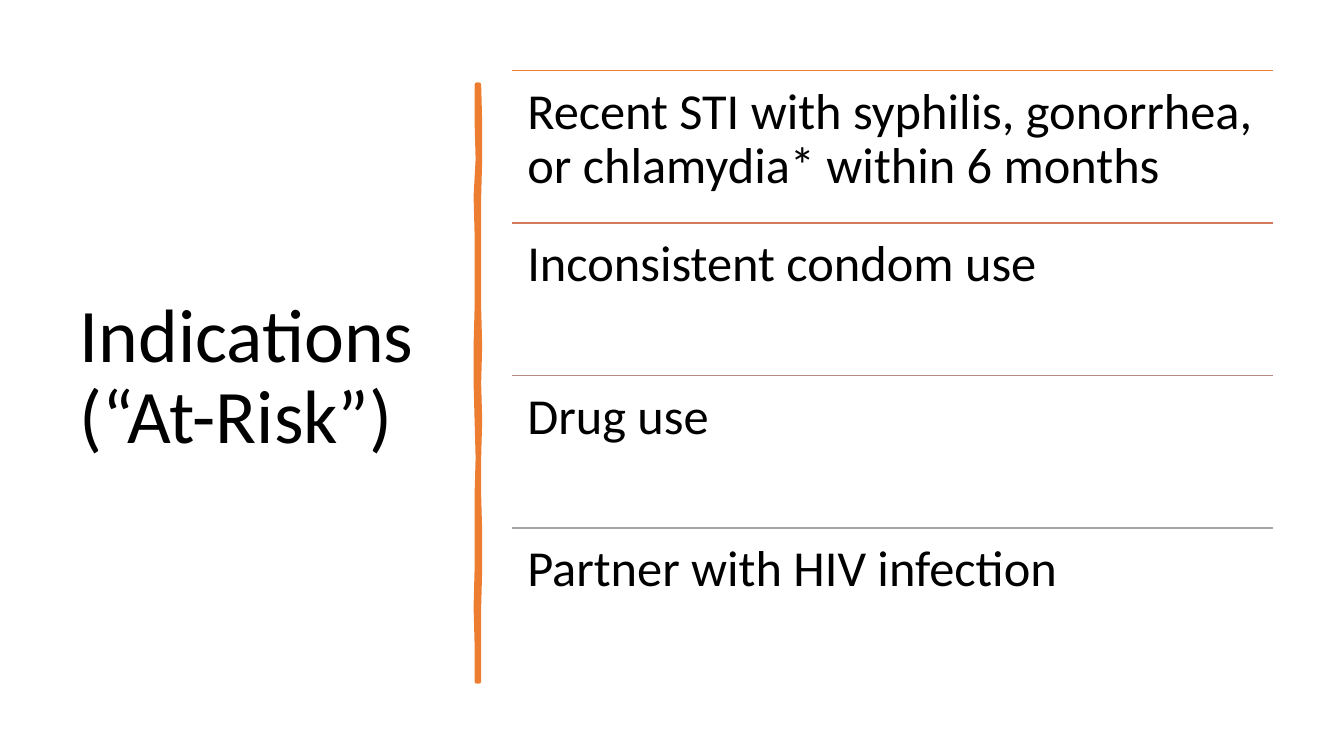
from dataclasses import dataclass

from lxml.etree import SubElement
from pptx import Presentation
from pptx.dml.color import RGBColor as Rgb
from pptx.enum.shapes import MSO_CONNECTOR as Link
from pptx.enum.text import MSO_ANCHOR as Anchor, MSO_AUTO_SIZE as Fit, PP_ALIGN as Align
from pptx.oxml.ns import qn
from pptx.util import Inches, Pt


@dataclass(frozen=True)
class Theme:
    font: str = "Calibri"
    ink: str = "000000"
    bar: str = "ED7D31"
    rules: tuple = ("ED7D31", "D17B5C", "B98A82", "A5A5A5")
    head: int = 54
    body: int = 36
    rule: float = 1
    brush: float = 3.25
    lead: float = 0.9


THEME = Theme()
TITLE = "Indications (“At-Risk”)"
ITEMS = (
    "Recent STI with syphilis, gonorrhea, or chlamydia* within 6 months",
    "Inconsistent condom use",
    "Drug use",
    "Partner with HIV infection",
)

# Grid, in inches
TOP, ROW = 0.7, 1.513
LEFT, WIDTH = 5.08, 7.55
PAD = 0.15

# Brush stroke: both edges at equal steps down the bar, in hundredths of an inch
BAR_X, BAR_TOP, BAR_TALL = 4.74, 0.84, 5.92
WEST = (-1, -1, 0, -2, -1, -1, -1, -2, -2, -1, 0, -1, -1, -1, -2, -1, -1)
EAST = (1, 2, 2, 1, 1, 1, 1, 2, 1, 2, 1, 1, 2, 2, 1, 1, 1)


def style(frame, size):
    frame.word_wrap = True
    frame.auto_size = Fit.NONE
    for para in frame.paragraphs:
        para.alignment = Align.LEFT
        para.line_spacing = THEME.lead
        for run in para.runs:
            run.font.name = THEME.font
            run.font.size = Pt(size)
            run.font.color.rgb = Rgb.from_string(THEME.ink)


def add_title(slide):
    title = slide.shapes.title
    title.left, title.top = Inches(0.69), Inches(TOP)
    title.width, title.height = Inches(3.74), Inches(6.11)
    title.text_frame.text = TITLE
    title.text_frame.vertical_anchor = Anchor.MIDDLE
    style(title.text_frame, THEME.head)


def add_brush(slide):
    """Draw the uneven upright bar between title and list."""
    step = BAR_TALL / (len(EAST) - 1)

    def edge(shifts):
        return [(Inches(BAR_X + dx / 100), Inches(BAR_TOP + i * step))
                for i, dx in enumerate(shifts)]

    first, *rest = edge(EAST) + edge(WEST)[::-1]
    pen = slide.shapes.build_freeform(*first)
    pen.add_line_segments(rest, close=True)
    bar = pen.convert_to_shape()
    bar.shadow.inherit = False
    bar.fill.solid()
    bar.fill.fore_color.rgb = Rgb.from_string(THEME.bar)
    bar.line.color.rgb = Rgb.from_string(THEME.bar)
    bar.line.width = Pt(THEME.brush)
    SubElement(bar.line._get_or_add_ln(), qn("a:round"))


def add_rule(group, top, color):
    y = Inches(top)
    rule = group.shapes.add_connector(
        Link.STRAIGHT, Inches(LEFT), y, Inches(LEFT + WIDTH), y)
    rule.line.color.rgb = Rgb.from_string(color)
    rule.line.width = Pt(THEME.rule)
    SubElement(rule._element.spPr, qn("a:effectLst"))


def add_item(group, top, text):
    box = group.shapes.add_textbox(
        Inches(LEFT), Inches(top), Inches(WIDTH), Inches(ROW))
    frame = box.text_frame
    frame.text = text
    frame.margin_left = frame.margin_right = Inches(PAD)
    frame.margin_top = frame.margin_bottom = Inches(PAD)
    frame.vertical_anchor = Anchor.TOP
    style(frame, THEME.body)


def main():
    deck = Presentation()
    deck.slide_width, deck.slide_height = Inches(13.33), Inches(7.5)
    slide = deck.slides.add_slide(deck.slide_layouts.get_by_name("Title Only"))
    add_title(slide)
    add_brush(slide)
    group = slide.shapes.add_group_shape()
    for i, (text, color) in enumerate(zip(ITEMS, THEME.rules)):
        top = TOP + i * ROW
        add_rule(group, top, color)
        add_item(group, top, text)
    deck.save("out.pptx")


if __name__ == "__main__":
    main()
